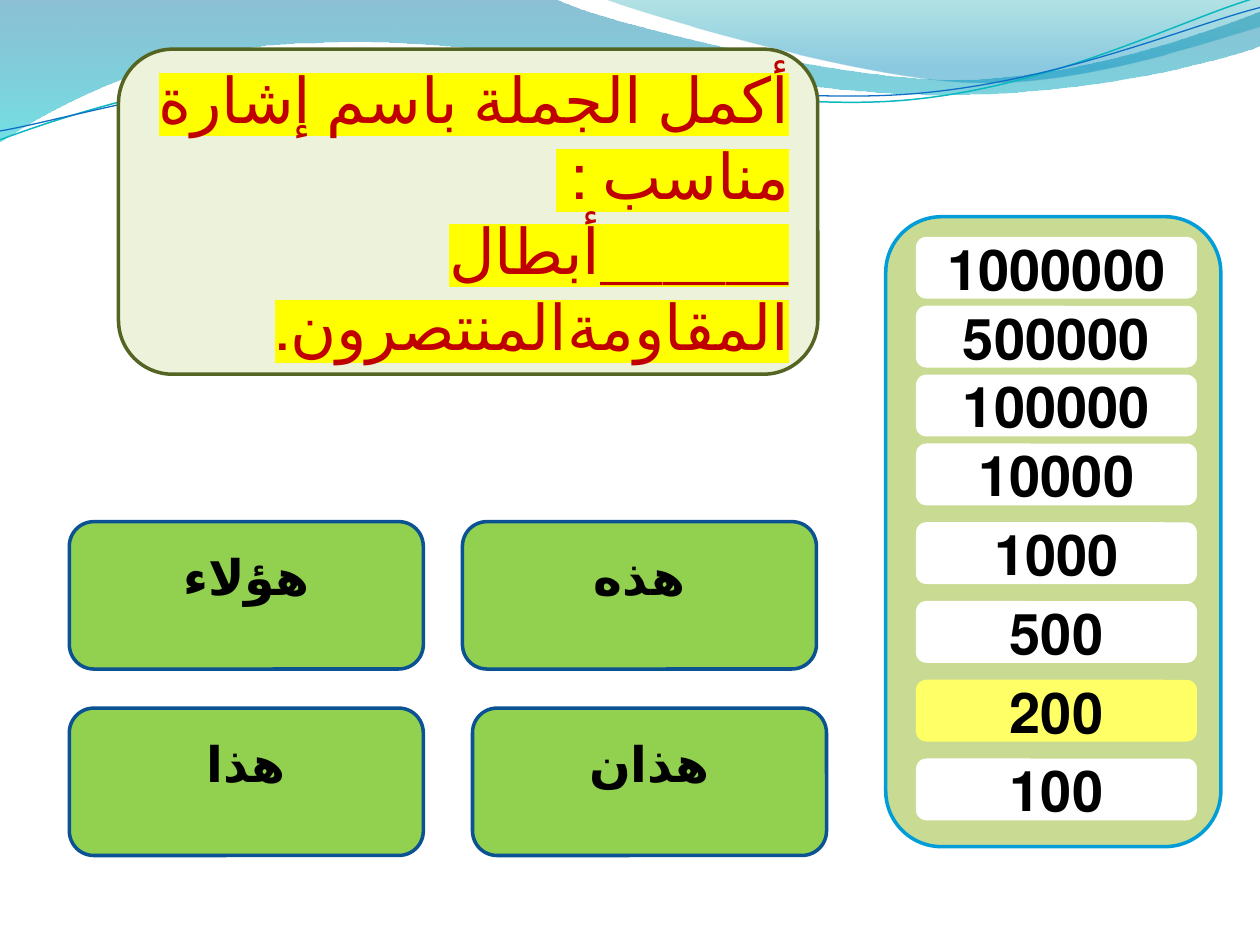
from lxml import etree
from pptx import Presentation
from pptx.dml.color import RGBColor
from pptx.enum.lang import MSO_LANGUAGE_ID as Lang
from pptx.enum.shapes import MSO_SHAPE as Shape
from pptx.enum.text import MSO_ANCHOR as Anchor, PP_ALIGN as Align
from pptx.oxml.ns import qn
from pptx.util import Inches, Pt

FONT = "TeX Gyre Pagella"
QUESTION = ["أكمل الجملة باسم إشارة مناسب : ", "______أبطال المقاومةالمنتصرون."]
ANSWERS = [("هؤلاء", 0.55, 4.14), ("هذه", 3.67, 4.14), ("هذا", 0.55, 5.62), ("هذان", 3.75, 5.62)]
PRIZES = ["1000000", "500000", "100000", "10000", "1000", "500", "200", "100"]
CURRENT = "200"
FIRST_TOP, BREAK_TOP, LAST_TOP, BREAK = 1.88, 3.52, 6.02, 3

WAVES = [
    ([(0, -0.01), (4.4, -0.01),
      (4.76, 0.17, 6.64, 0.63, 7.58, 0.63), (8.53, 0.63, 9.58, 0.26, 10, 0.09), (10.01, 0.36),
      (9.83, 0.44, 8.7, 0.76, 7.46, 0.75), (6.22, 0.75, 3.82, 0.28, 2.57, 0.34),
      (1.29, 0.35, 0.46, 0.83, -0.01, 1.13), (0, -0.01)],
     [(0, "0074A1", 45), (1, "00C6CF", 55)]),
    ([(4.79, -0.01), (5.09, 0.11, 6.82, 0.62, 7.69, 0.65),
      (8.56, 0.69, 9.61, 0.32, 10, 0.21), (10, 0), (4.79, -0.01)],
     [(0, "00A1A9", 30), (0.8, "008BBF", 45)]),
]
STRANDS = [
    ([(0, 1.11), (0.48, 0.93, 1.58, 0.57, 2.77, 0.52), (3.95, 0.47, 5.93, 0.89, 7.13, 0.8),
      (8.33, 0.71, 9.38, 0.15, 9.98, -0.02)], "0AB8BF", 0.85),
    ([(0, 1.04), (0.47, 0.96, 1.64, 0.61, 2.83, 0.56), (4.03, 0.51, 5.97, 0.83, 7.17, 0.75),
      (8.36, 0.67, 9.41, 0.21, 10, 0.06)], "0F6FC6", 0.75),
]


def rgb(value):
    """Turn a hex string into a colour."""
    return RGBColor.from_string(value)


def add_outline(s, steps, close):
    """Draw a freeform whose six-number steps are cubic curves."""
    ends = [(Inches(step[-2]), Inches(step[-1])) for step in steps]
    builder = s.shapes.build_freeform(*ends[0])
    builder.add_line_segments(ends[1:], close=close)
    sp = builder.convert_to_shape()
    sp.shadow.inherit = False
    segments = list(sp._element.spPr.iter(qn("a:lnTo")))
    for segment, step in zip(segments, steps[1:]):
        if len(step) == 6:
            segment.tag = qn("a:cubicBezTo")
            for i, (x, y) in enumerate((step[:2], step[2:4])):
                point = etree.Element(qn("a:pt"), x=str(Inches(x) - sp.left), y=str(Inches(y) - sp.top))
                segment.insert(i, point)
    return sp


def add_wave(s, steps, stops):
    """Draw a closed wave with a translucent vertical gradient."""
    sp = add_outline(s, steps, True)
    sp.line.fill.background()
    sp.fill.gradient()
    sp.fill.gradient_angle = 270
    for stop, (position, color, _) in zip(sp.fill.gradient_stops, stops):
        stop.position = position
        stop.color.rgb = rgb(color)
    for node, (_, _, opacity) in zip(sp._element.spPr.iter(qn("a:srgbClr")), stops):
        etree.SubElement(node, qn("a:alpha"), val=str(opacity * 1000))


def add_strand(s, steps, color, width):
    """Draw an open curved line."""
    sp = add_outline(s, steps, False)
    sp.fill.background()
    sp.line.color.rgb = rgb(color)
    sp.line.width = Pt(width)


def add_box(s, kind, box, fill, line=None):
    """Draw a filled preset shape."""
    sp = s.shapes.add_shape(kind, *map(Inches, box))
    sp.shadow.inherit = False
    sp.fill.solid()
    sp.fill.fore_color.rgb = rgb(fill)
    if line:
        sp.line.color.rgb = rgb(line)
        sp.line.width = Pt(2)
    else:
        sp.line.fill.background()
    return sp


def write(sp, lines, size, color="000000", bold=False, align=Align.CENTER, highlight=None, bottom=0.05):
    """Fill a shape with right-to-left paragraphs."""
    tf = sp.text_frame
    tf.word_wrap = True
    tf.vertical_anchor = Anchor.MIDDLE
    tf.margin_bottom = Inches(bottom)
    for i, text in enumerate(lines):
        p = tf.add_paragraph() if i else tf.paragraphs[0]
        p.alignment = align
        p._p.get_or_add_pPr().set("rtl", "1")
        r = p.add_run()
        r.text = text
        r.font.size, r.font.bold, r.font.name = Pt(size), bold, FONT
        r.font.language_id = Lang.ARABIC
        r.font.color.rgb = rgb(color)
        if highlight:
            mark = etree.Element(qn("a:highlight"))
            etree.SubElement(mark, qn("a:srgbClr"), val=highlight)
            r._r.rPr.find(qn("a:solidFill")).addnext(mark)


def main():
    """Build the quiz slide."""
    prs = Presentation()
    prs.slide_width, prs.slide_height = Inches(10), Inches(7.5)
    s = prs.slides.add_slide(prs.slide_layouts[6])
    for wave in WAVES:
        add_wave(s, *wave)
    for strand in STRANDS:
        add_strand(s, *strand)

    question = add_box(s, Shape.FLOWCHART_ALTERNATE_PROCESS, (0.94, 0.39, 5.55, 2.58), "EDF3DB", "546422")
    write(question, QUESTION, 36, color="C00000", align=Align.RIGHT, highlight="FFFF00")
    for text, left, top in ANSWERS:
        answer = add_box(s, Shape.ROUNDED_RECTANGLE, (left, top, 2.81, 1.17), "92D050", "0B5292")
        write(answer, [text], 28, bold=True, bottom=0.35)

    add_box(s, Shape.ROUNDED_RECTANGLE, (7.03, 1.72, 2.66, 5), "C9DA92", "009DD9")
    upper = (BREAK_TOP - FIRST_TOP) / BREAK
    lower = (LAST_TOP - BREAK_TOP) / (len(PRIZES) - 1 - BREAK)
    for i, prize in enumerate(PRIZES):
        top = FIRST_TOP + upper * min(i, BREAK) + lower * max(i - BREAK, 0)
        fill = "FFFF66" if prize == CURRENT else "FFFFFF"
        write(add_box(s, Shape.ROUNDED_RECTANGLE, (7.27, top, 2.23, 0.49), fill), [prize], 32, bold=True)
    prs.save("out.pptx")


if __name__ == "__main__":
    main()
